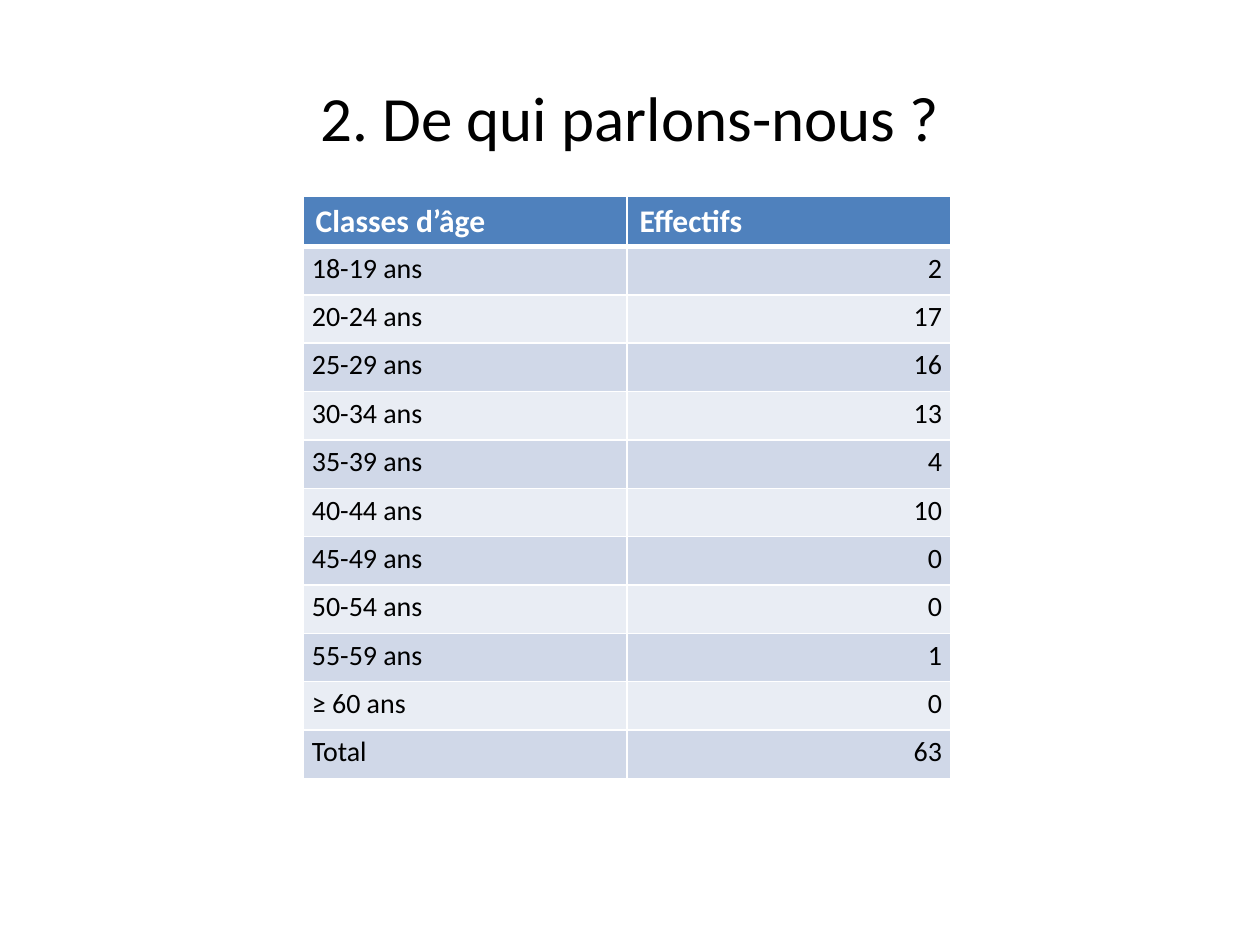
from lxml import etree
from pptx import Presentation
from pptx.dml.color import RGBColor
from pptx.enum.text import MSO_ANCHOR, PP_ALIGN
from pptx.oxml.ns import qn
from pptx.util import Pt

LEFT, CENTER, RIGHT = PP_ALIGN.LEFT, PP_ALIGN.CENTER, PP_ALIGN.RIGHT
MIDDLE = MSO_ANCHOR.MIDDLE
PX = 914400 // 126
FONT = "Calibri"

# Content
TITLE = "2. De qui parlons-nous ?"
HEAD = ("Classes d’âge", "Effectifs")
ROWS = [
    ("18-19 ans", 2),
    ("20-24 ans", 17),
    ("25-29 ans", 16),
    ("30-34 ans", 13),
    ("35-39 ans", 4),
    ("40-44 ans", 10),
    ("45-49 ans", 0),
    ("50-54 ans", 0),
    ("55-59 ans", 1),
    ("≥ 60 ans", 0),
    ("Total", 63),
]
BANDS = ("D0D8E8", "E9EDF4")
BLUE, WHITE, BLACK = "4F81BD", "FFFFFF", "000000"


def px(n):
    return n * PX


def color(code):
    return RGBColor.from_string(code)


def write(para, text, size, ink, align, bold=False):
    para.text = str(text)
    para.alignment = align
    font = para.font
    font.name, font.size, font.bold = FONT, Pt(size), bold
    font.color.rgb = color(ink)


def border(cell, top, bottom):
    props = cell._tc.get_or_add_tcPr()
    for side, width in (("L", 1), ("R", 1), ("T", top), ("B", bottom)):
        line = etree.SubElement(props, qn(f"a:ln{side}"), w=str(Pt(width)))
        fill = etree.SubElement(line, qn("a:solidFill"))
        etree.SubElement(fill, qn("a:srgbClr"), val=WHITE)


def paint(cell, code):
    cell.fill.solid()
    cell.fill.fore_color.rgb = color(code)


prs = Presentation()
prs.slide_width, prs.slide_height = px(1260), px(945)
slide = prs.slides.add_slide(prs.slide_layouts[6])

# Title
box = slide.shapes.add_textbox(px(63), px(38), px(1134), px(157))
frame = box.text_frame
frame.word_wrap = True
frame.vertical_anchor = MIDDLE
write(frame.paragraphs[0], TITLE, 36, BLACK, CENTER)

# Table
count = len(ROWS) + 1
high = px(581)
table = slide.shapes.add_table(
    count, len(HEAD), px(303), px(196), px(648), high).table
for row in table.rows:
    row.height = high // count

# Header row
for col, text in enumerate(HEAD):
    cell = table.cell(0, col)
    border(cell, 1, 3)
    paint(cell, BLUE)
    write(cell.text_frame.paragraphs[0], text, 18, WHITE, LEFT, True)

# Body rows
for num, row in enumerate(ROWS):
    for col, (text, align) in enumerate(zip(row, (LEFT, RIGHT))):
        cell = table.cell(num + 1, col)
        border(cell, 1 if num else 3, 1)
        paint(cell, BANDS[num % 2])
        cell.margin_left = cell.margin_right = px(9)
        cell.margin_top = cell.margin_bottom = 0
        para = cell.text_frame.paragraphs[0]
        write(para, text, 16, BLACK, align)
        para.line_spacing = 1.15

prs.save("out.pptx")
